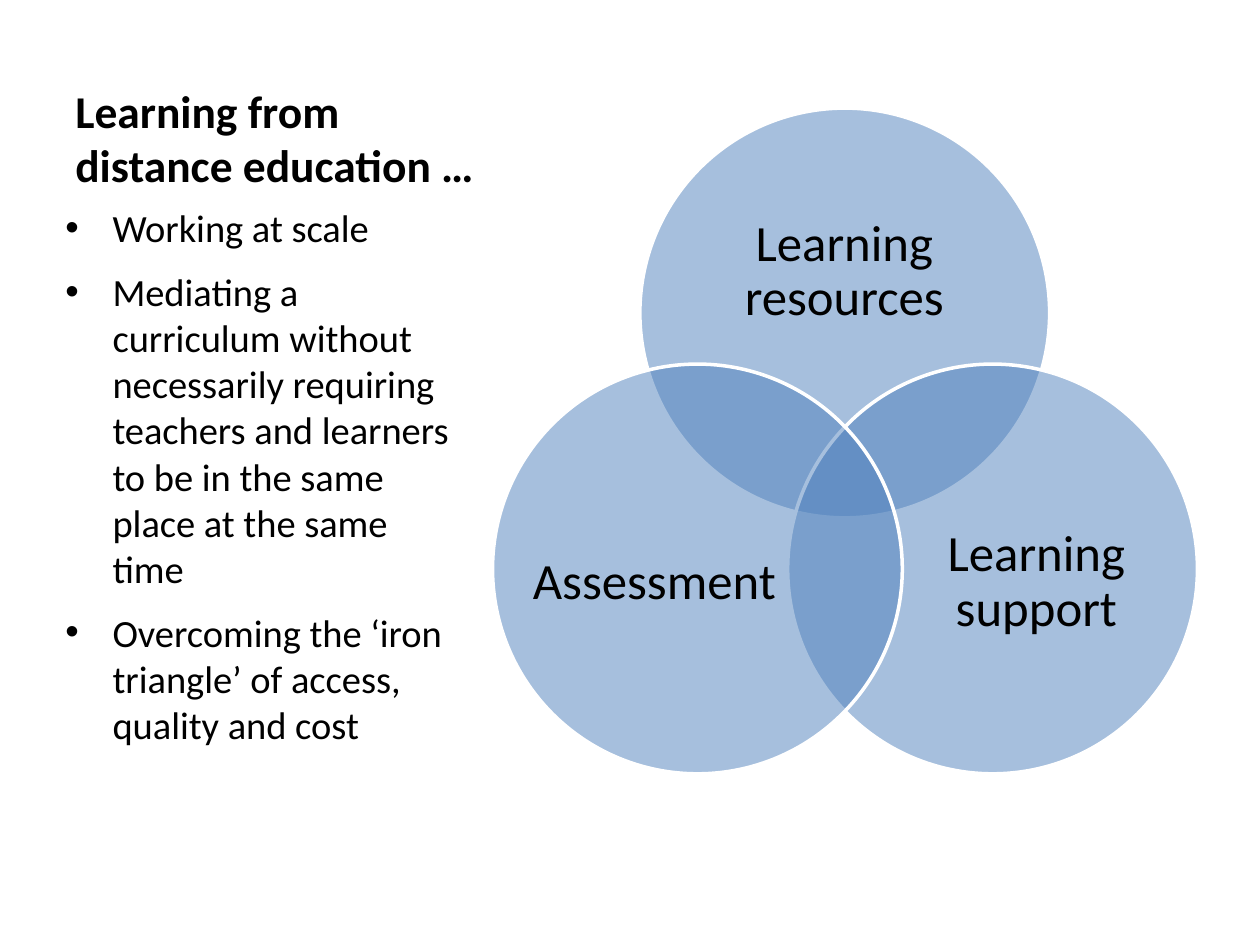
from lxml.etree import SubElement
from pptx import Presentation
from pptx.dml.color import RGBColor
from pptx.enum.shapes import MSO_SHAPE
from pptx.enum.text import MSO_ANCHOR, PP_ALIGN
from pptx.oxml.ns import qn
from pptx.util import Cm, Pt

BLACK = RGBColor(0x00, 0x00, 0x00)
WHITE = RGBColor(0xFF, 0xFF, 0xFF)
BLUE = RGBColor(0x4F, 0x81, 0xBD)


def add_text(box, lines, anchor, font, layout):
    """Add a wrapped text box, one paragraph a line, and return its frame."""
    frame = slide.shapes.add_textbox(*map(Cm, box)).text_frame
    frame.word_wrap = True
    frame.vertical_anchor = anchor
    frame.text = "\n".join(lines)
    for para in frame.paragraphs:
        for name, value in layout.items():
            setattr(para, name, value)
        for run in para.runs:
            run.font.color.rgb = BLACK
            for name, value in font.items():
                setattr(run.font, name, value)
    return frame


deck = Presentation()
deck.slide_width, deck.slide_height = Cm(25.4), Cm(19.05)
slide = deck.slides.add_slide(deck.slide_layouts[6])

add_text((1.27, 0.76, 8.69, 3.23), ["Learning from distance education …"],
         MSO_ANCHOR.BOTTOM, {"name": "Calibri", "size": Pt(26), "bold": True}, {})

# Overlapping circles, each with its label
size = 8.26
circles = [
    (12.9, 2.18, "Learning resources", (14.0, 3.63, 6.05, 3.71)),
    (15.88, 7.34, "Learning support", (18.42, 9.47, 4.95, 4.55)),
    (9.93, 7.34, "Assessment", (10.72, 9.47, 4.95, 4.55)),
]
for left, top, label, box in circles:
    disc = slide.shapes.add_shape(
        MSO_SHAPE.OVAL, Cm(left), Cm(top), Cm(size), Cm(size))
    disc.shadow.inherit = False
    disc.fill.solid()
    disc.fill.fore_color.rgb = BLUE
    color = disc.fill._xPr.find(".//" + qn("a:srgbClr"))
    SubElement(color, qn("a:alpha"), val="50000")
    disc.line.color.rgb = WHITE
    disc.line.width = Pt(2)
    frame = add_text(box, [label], MSO_ANCHOR.MIDDLE,
                     {"name": "Calibri", "size": Pt(29)},
                     {"alignment": PP_ALIGN.CENTER, "line_spacing": 0.9})
    for side in ("left", "top", "right", "bottom"):
        setattr(frame, "margin_" + side, 0)

points = [
    "Working at scale",
    "Mediating a curriculum without necessarily requiring teachers and "
    "learners to be in the same place at the same time",
    "Overcoming the ‘iron triangle’ of access, quality and cost",
]
body = add_text((1.07, 3.99, 8.36, 13.03), points, MSO_ANCHOR.TOP,
                {"name": "Calibri", "size": Pt(22)},
                {"space_before": Pt(4), "space_after": Pt(6)})
body.paragraphs[0].space_before = Pt(0)
for para in body.paragraphs:
    props = para._p.get_or_add_pPr()
    props.set("marL", str(Cm(0.95)))
    props.set("indent", str(-Cm(0.95)))
    SubElement(props, qn("a:buFont"), typeface="Arial")
    SubElement(props, qn("a:buChar"), char="•")

deck.save("out.pptx")
